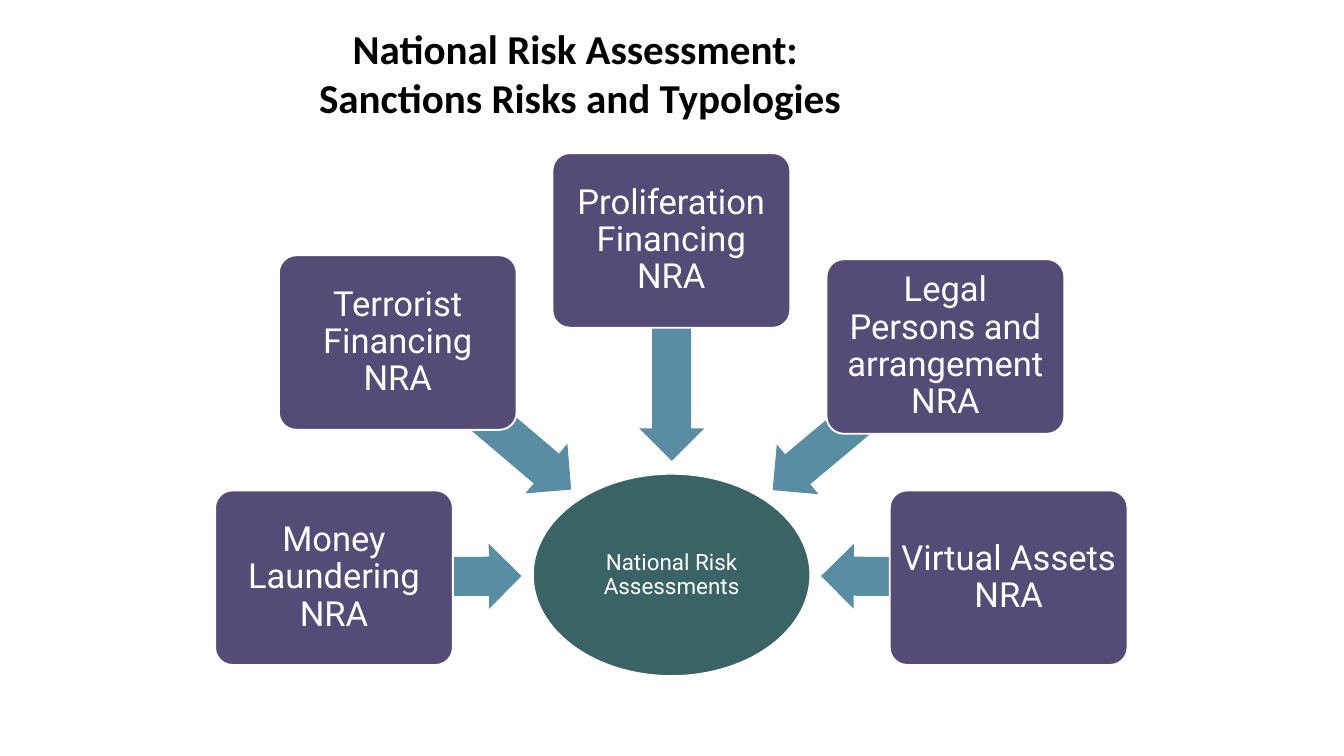
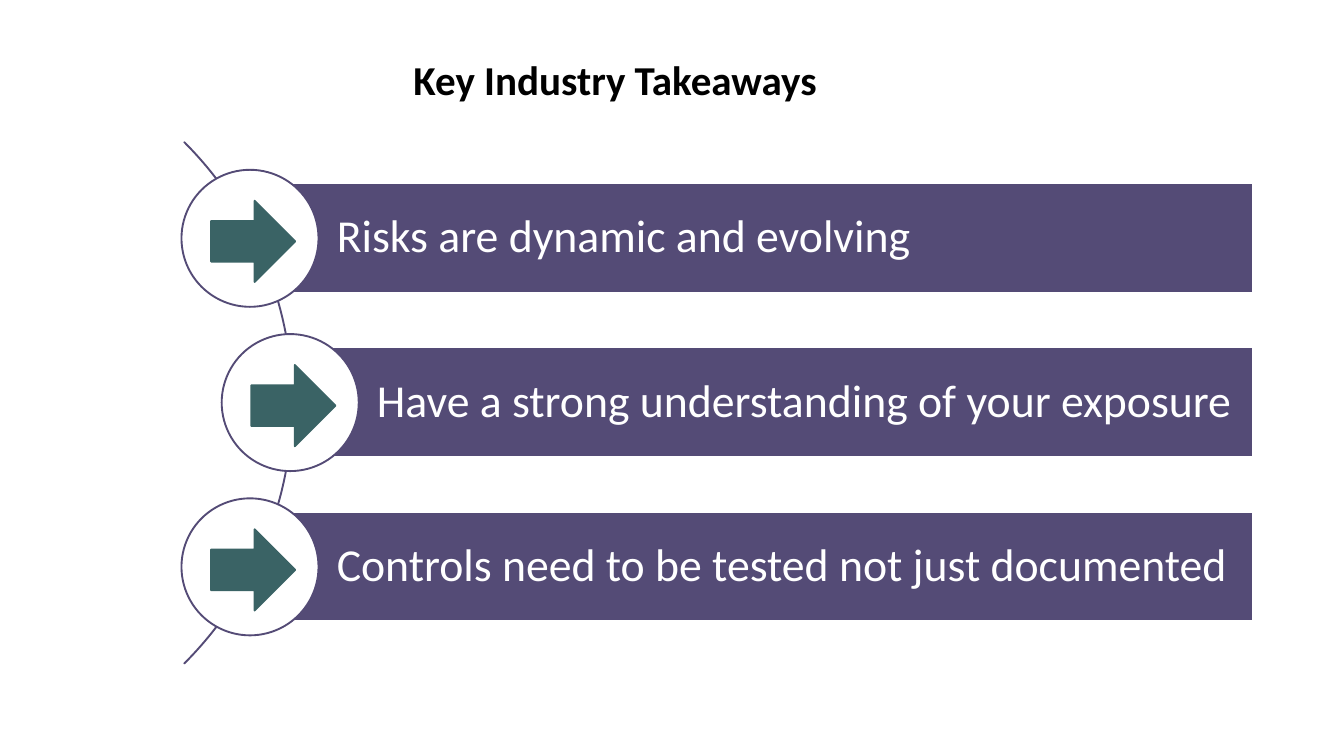
from pptx import Presentation
from pptx.dml.color import RGBColor
from pptx.enum.shapes import MSO_SHAPE
from pptx.enum.text import MSO_ANCHOR, PP_ALIGN
from pptx.util import Cm, Pt

WHITE = RGBColor(0xFF, 0xFF, 0xFF)
BLACK = RGBColor(0x00, 0x00, 0x00)
PLUM = RGBColor(0x54, 0x4B, 0x76)
PINE = RGBColor(0x3A, 0x63, 0x65)
STEEL = RGBColor(0x58, 0x8D, 0xA3)
HEAD = "Calibri"
BODY = "Roboto"


class Deck:
    def __init__(self):
        self.prs = Presentation()
        self.prs.slide_width = Cm(50.8)
        self.prs.slide_height = Cm(28.58)
        self.slide = None

    def page(self):
        self.slide = self.prs.slides.add_slide(self.prs.slide_layouts[6])

    def label(self, shape, text, size, font, color,
              bold=False, align=PP_ALIGN.CENTER, space=0.9):
        frame = shape.text_frame
        frame.word_wrap = True
        frame.vertical_anchor = MSO_ANCHOR.MIDDLE
        frame.text = text
        for para in frame.paragraphs:
            para.alignment = align
            para.line_spacing = space
            for run in para.runs:
                run.font.size = Pt(size)
                run.font.name = font
                run.font.bold = bold
                run.font.color.rgb = color

    def inset(self, shape, left, rest):
        frame = shape.text_frame
        frame.margin_left = Cm(left)
        frame.margin_right = frame.margin_top = frame.margin_bottom = Cm(rest)

    def title(self, text, x, y, high):
        box = self.slide.shapes.add_textbox(Cm(x), Cm(y), Cm(43.82), Cm(high))
        self.label(box, text, 44, HEAD, BLACK, bold=True, space=1.0)

    def shape(self, kind, x, y, wide, high, fill=None, line=None, adjust=()):
        item = self.slide.shapes.add_shape(
            kind, Cm(x), Cm(y), Cm(wide), Cm(high))
        item.shadow.inherit = False
        for spot, value in enumerate(adjust):
            item.adjustments[spot] = value
        if fill is None:
            item.fill.background()
        else:
            item.fill.solid()
            item.fill.fore_color.rgb = fill
        if line is None:
            item.line.fill.background()
        else:
            item.line.color.rgb = line
            item.line.width = Pt(2)
        return item

    def hub(self, text, x, y, wide, high):
        oval = self.shape(MSO_SHAPE.OVAL, x, y, wide, high, PINE, WHITE)
        self.inset(oval, 0.05, 0.05)
        self.label(oval, text, 24, BODY, WHITE)

    def arrow(self, x, y, wide, turn):
        item = self.shape(MSO_SHAPE.LEFT_ARROW, x, y, wide, 2.46, STEEL,
                          adjust=(0.6, 0.5))
        item.rotation = turn

    def card(self, text, x, y):
        box = self.shape(MSO_SHAPE.ROUNDED_RECTANGLE, x, y, 8.99, 6.6,
                         PLUM, WHITE, (0.1,))
        self.inset(box, 0.19, 0.19)
        self.label(box, text, 37, BODY, WHITE)

    def bar(self, text, x, y, end):
        band = self.shape(MSO_SHAPE.RECTANGLE, x, y, end - x, 4.14,
                          PLUM, WHITE)
        self.inset(band, 3.28, 0.36)
        self.label(band, text, 49, HEAD, WHITE, align=PP_ALIGN.LEFT)
        self.shape(MSO_SHAPE.OVAL, x - 2.59, y - 0.51, 5.18, 5.18,
                   WHITE, PLUM)

    def mark(self, x, y):
        self.shape(MSO_SHAPE.RIGHT_ARROW, x, y, 3.18, 3.07, PINE, PINE)


def risks(deck):
    deck.page()
    deck.title("National Risk Assessment: \vSanctions Risks and Typologies",
               0.03, 0, 5.51)
    deck.hub("National Risk Assessments", 20.14, 17.91, 10.49, 7.65)
    parts = [
        ("Money Laundering NRA", (8.13, 18.54), (12.62, 20.57, 7.09, 179.6)),
        ("Terrorist Financing NRA", (10.54, 9.65), (14.02, 14.5, 8.59, 220.3)),
        ("Proliferation Financing NRA", (20.88, 5.79),
         (21.21, 12.01, 8.36, 270)),
        ("Legal Persons and arrangement NRA", (31.24, 9.8),
         (28.22, 14.58, 8.48, 320.1)),
        ("Virtual Assets NRA", (33.63, 18.54), (31.04, 20.57, 7.09, 0.4)),
    ]
    for text, place, arrow in parts:
        deck.arrow(*arrow)
        deck.card(text, *place)


def lessons(deck):
    deck.page()
    deck.title("Key Industry Takeaways", 1.35, 1.07, 3.81)
    deck.shape(MSO_SHAPE.BLOCK_ARC, -16.81, 1.3, 27.86, 27.86,
               line=PLUM, adjust=(189, 27, 0))
    points = [
        ("Risks are dynamic and evolving", 9.45),
        ("Have a strong understanding of your exposure", 10.97),
        ("Controls need to be tested not just documented", 9.45),
    ]
    top, step = 6.93, 6.21
    for row, (text, x) in enumerate(points):
        y = top + row * step
        deck.bar(text, x, y, 47.35)
        deck.mark(x - 1.47, y + 0.66)


def main():
    deck = Deck()
    risks(deck)
    lessons(deck)
    deck.prs.save("out.pptx")


if __name__ == "__main__":
    main()
